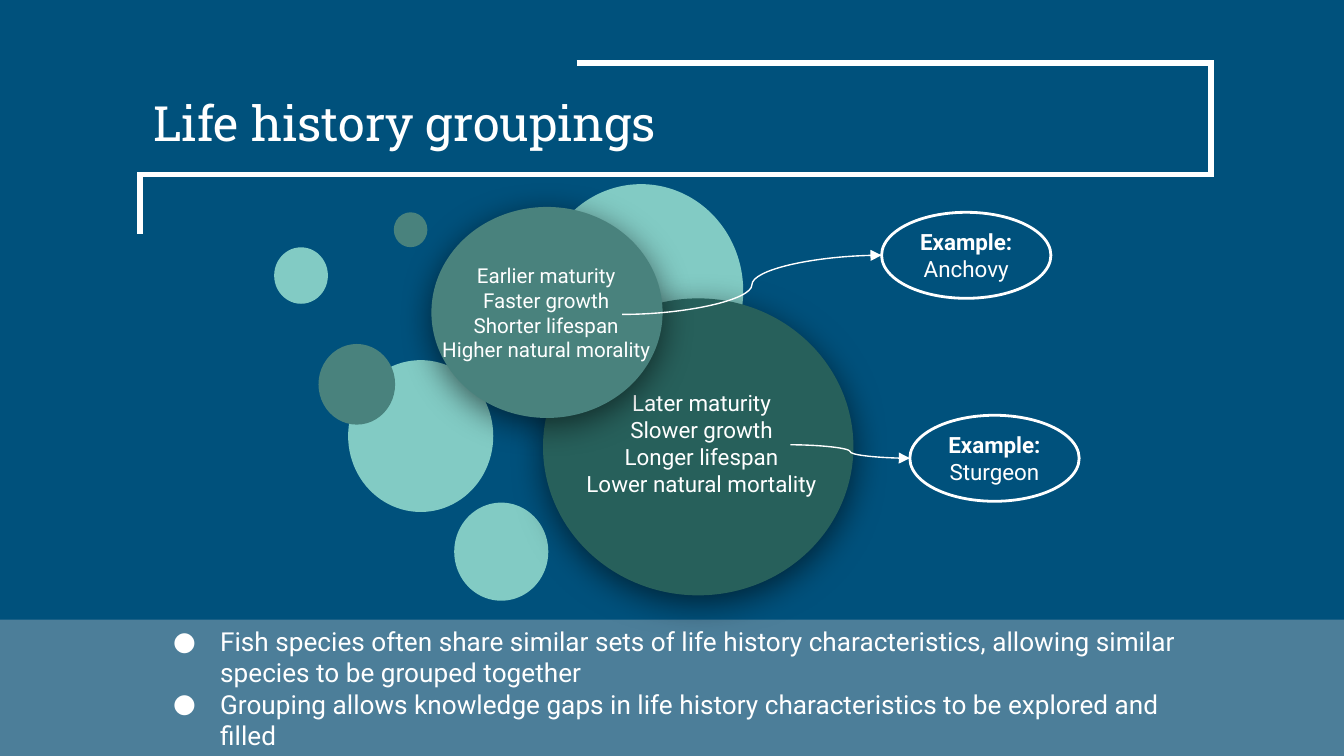
from lxml import etree
from pptx import Presentation
from pptx.dml.color import RGBColor
from pptx.enum.shapes import MSO_CONNECTOR as CONN, MSO_SHAPE as SHAPE
from pptx.enum.text import MSO_ANCHOR as ANCHOR, PP_ALIGN as ALIGN
from pptx.oxml import parse_xml
from pptx.oxml.ns import nsdecls, qn
from pptx.util import Inches, Pt

NAVY = RGBColor(0x00, 0x51, 0x7C)
WHITE = RGBColor(0xFF, 0xFF, 0xFF)
GREY = RGBColor(0xC9, 0xC9, 0xC9)
MINT = RGBColor(0x82, 0xCB, 0xC4)
TEAL = RGBColor(0x49, 0x82, 0x7D)
PINE = RGBColor(0x27, 0x60, 0x5B)

BUBBLES = [
    (1.38, 2.44, 0.70, 0.73, MINT),
    (0.04, 0.54, 0.40, 0.42, MINT),
    (0.59, 1.38, 1.08, 1.13, MINT),
    (2.01, 0.07, 1.52, 1.59, MINT),
    (0.37, 1.26, 0.57, 0.60, TEAL),
    (0.93, 0.28, 0.25, 0.26, TEAL),
]
LATE_TRAITS = ["Later maturity", "Slower growth", "Longer lifespan", "Lower natural mortality"]
EARLY_TRAITS = ["Earlier maturity", "Faster growth", "Shorter lifespan", "Higher natural morality"]
POINTS = [
    "Fish species often share similar sets of life history characteristics, "
    "allowing similar species to be grouped together",
    "Grouping allows knowledge gaps in life history characteristics to be explored and filled",
]


def inches(*values):
    """Convert numbers to lengths."""
    return [Inches(v) for v in values]


def set_frame(tf, anchor=ANCHOR.MIDDLE, bottom=0.1):
    """Format a text frame with the slide's common margins."""
    side = Inches(0.1)
    values = {"word_wrap": True, "vertical_anchor": anchor, "margin_left": side,
              "margin_right": side, "margin_top": side, "margin_bottom": Inches(bottom)}
    for name, value in values.items():
        setattr(tf, name, value)


def add_run(p, text, size, font="Roboto", bold=False):
    """Add a white run to a paragraph."""
    r = p.add_run()
    r.text = text
    for name, value in {"name": font, "size": Pt(size), "bold": bold}.items():
        setattr(r.font, name, value)
    r.font.color.rgb = WHITE


def add_lines(tf, lines, size, align):
    """Write one paragraph per line and return the paragraphs."""
    for i, line in enumerate(lines):
        p = tf.add_paragraph() if i else tf.paragraphs[0]
        p.alignment = align
        add_run(p, line, size)
    return tf.paragraphs


def add_filled(s, kind, box, color):
    """Add a filled preset shape without outline or shadow."""
    sp = s.shapes.add_shape(kind, *inches(*box))
    sp.shadow.inherit = False
    sp.fill.solid()
    sp.fill.fore_color.rgb = color
    sp.line.fill.background()
    return sp


def add_title(s, box, text):
    """Place the title and the bracket line that surrounds it."""
    x, y, w, h = box
    points = [(x + 3.25, y), (x + w, y), (x + w, y + 0.83), (x, y + 0.83), (x, y + h)]
    start, *rest = [inches(*pt) for pt in points]
    builder = s.shapes.build_freeform(*start)
    builder.add_line_segments(rest, close=False)
    sp = builder.convert_to_shape()
    sp.shadow.inherit = False
    sp.fill.background()
    sp.line.color.rgb = WHITE
    sp.line.width = Pt(3)
    etree.SubElement(sp.line._get_or_add_ln(), qn("a:miter"), lim="800000")

    title = s.shapes.title
    title.left, title.top, title.width, title.height = inches(x, y + 0.12, 6.31, 0.92)
    set_frame(title.text_frame, ANCHOR.TOP)
    p = title.text_frame.paragraphs[0]
    p.alignment = ALIGN.LEFT
    add_run(p, text, 26, "Roboto Slab")


def add_footer(s, box, points):
    """Place the translucent band with its bulleted points."""
    x, y, w, h = box
    band = add_filled(s, SHAPE.RECTANGLE, box, GREY)
    color = band.fill._xPr.find(".//" + qn("a:srgbClr"))
    etree.SubElement(color, qn("a:alpha"), val="38000")
    tf = s.shapes.add_textbox(*inches(x + 1.04, y, w - 2.03, h)).text_frame
    set_frame(tf)
    for p in add_lines(tf, points, 14, ALIGN.LEFT):
        pr = p._p.get_or_add_pPr()
        pr.set("marL", str(Inches(0.5)))
        pr.set("indent", str(Inches(-0.35)))
        color = etree.SubElement(etree.SubElement(pr, qn("a:buClr")), qn("a:srgbClr"))
        color.set("val", str(WHITE))
        etree.SubElement(pr, qn("a:buFont"), typeface="Roboto")
        etree.SubElement(pr, qn("a:buChar"), char="●")


def add_group_circle(s, box, color, text_box, lines, size, bottom=0.1):
    """Place a shadowed circle with its list of traits."""
    x, y, w, h = box
    sp = add_filled(s, SHAPE.OVAL, box, color)
    effects = sp._element.spPr.find(qn("a:effectLst"))
    effects.append(parse_xml(
        f'<a:outerShdw {nsdecls("a")} blurRad="{Pt(18)}" dist="{Pt(4)}" dir="5400000" '
        'algn="ctr" rotWithShape="0"><a:srgbClr val="000000"><a:alpha val="55000"/>'
        '</a:srgbClr></a:outerShdw>'))
    dx, dy, tw, th = text_box
    tf = s.shapes.add_textbox(*inches(x + dx, y + dy, tw, th)).text_frame
    set_frame(tf, bottom=bottom)
    add_lines(tf, lines, size, ALIGN.CENTER)


def add_cluster(s, box):
    """Place the loose bubbles and the two life history circles."""
    x, y, _, _ = box
    for dx, dy, w, h, color in BUBBLES:
        add_filled(s, SHAPE.OVAL, (x + dx, y + dy, w, h), color)
    add_group_circle(s, (x + 2.04, y + 0.92, 2.31, 2.21), PINE,
                     (0.14, 0.65, 2.08, 1.05), LATE_TRAITS, 12, 0.3)
    add_group_circle(s, (x + 1.21, y + 0.24, 1.72, 1.57), TEAL,
                     (-0.3, 0.16, 2.31, 1.25), EARLY_TRAITS, 11)


def add_example(s, box, label, species, start):
    """Place an example oval and the curved arrow that leads to it."""
    x, y, w, h = box
    sp = s.shapes.add_shape(SHAPE.OVAL, *inches(*box))
    sp.shadow.inherit = False
    sp.fill.background()
    sp.line.color.rgb = WHITE
    sp.line.width = Pt(1.5)
    set_frame(sp.text_frame)
    p = sp.text_frame.paragraphs[0]
    p.alignment = ALIGN.CENTER
    add_run(p, label, 12, bold=True)
    add_run(p, species, 12)

    arrow = s.shapes.add_connector(CONN.CURVE, *inches(*start, x, y + h / 2))
    arrow.line.color.rgb = WHITE
    arrow.line.width = Pt(0.75)
    etree.SubElement(arrow.line._get_or_add_ln(), qn("a:tailEnd"), type="triangle")
    etree.SubElement(arrow._element.spPr, qn("a:effectLst"))


def main():
    """Build the slide and save it."""
    prs = Presentation()
    prs.slide_width = Inches(10)
    prs.slide_height = prs.slide_width * 9 // 16
    s = prs.slides.add_slide(prs.slide_layouts[5])
    s.background.fill.solid()
    s.background.fill.fore_color.rgb = NAVY
    add_title(s, (1.04, 0.47, 7.97, 1.27), "Life history groupings")
    add_footer(s, (0, 4.61, 10, 1.02), POINTS)
    add_cluster(s, (2, 1.3, 4.35, 3.17))
    add_example(s, (6.56, 1.58, 1.26, 0.64), "Example:", " Anchovy", (4.63, 2.34))
    add_example(s, (6.77, 3.09, 1.26, 0.64), "Example: ", "Sturgeon", (5.88, 3.31))
    prs.save("out.pptx")


if __name__ == "__main__":
    main()
